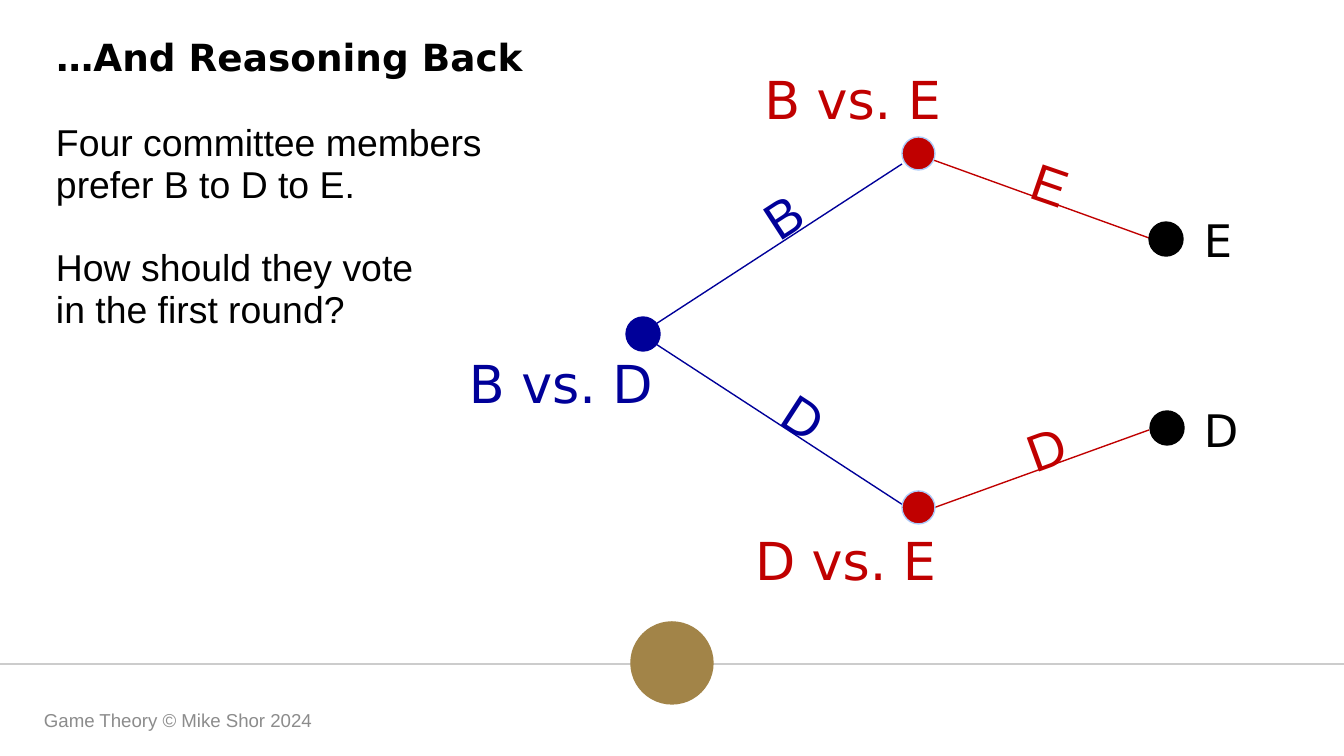
from lxml.etree import SubElement
from pptx import Presentation
from pptx.dml.color import RGBColor
from pptx.enum.shapes import MSO_CONNECTOR, MSO_SHAPE
from pptx.enum.text import MSO_ANCHOR, MSO_AUTO_SIZE, PP_ALIGN
from pptx.oxml.ns import qn
from pptx.util import Pt

PX = 9144000 / 1344
BLUE, RED, BLACK, PALE, GOLD = "000099", "C00000", "000000", "ACCBF9", "A28448"


def emu(*lengths):
    return [round(length * PX) for length in lengths]


def write(frame, lines, size, font, color, margins=(13, 7), align=PP_ALIGN.LEFT):
    frame.word_wrap = True
    frame.auto_size = MSO_AUTO_SIZE.NONE
    frame.vertical_anchor = MSO_ANCHOR.TOP
    frame.margin_left, frame.margin_top = emu(*margins)
    frame.margin_right, frame.margin_bottom = emu(13, 0)
    for index, line in enumerate(lines):
        para = frame.paragraphs[0] if index == 0 else frame.add_paragraph()
        para.alignment = align
        span = para.add_run()
        span.text = line
        span.font.size = Pt(size)
        span.font.name = font
        span.font.color.rgb = RGBColor.from_string(color)


deck = Presentation()
deck.slide_width, deck.slide_height = emu(1344, 756)
page = deck.slides.add_slide(deck.slide_layouts[5])
shapes = page.shapes

title = shapes.title
title.left, title.top, title.width, title.height = emu(43, 27, 672, 60)
write(title.text_frame, ["…And Reasoning Back"], 20, "DejaVu Sans", BLACK)
title.text_frame.paragraphs[0].runs[0].font.bold = True

edges = [
    (0, 664, 1344, 664, "CCCCCC"),
    (642, 333, 902, 164, BLUE),
    (642, 335, 903, 505, BLUE),
    (925, 157, 1149, 238, RED),
    (925, 511, 1149, 430, RED),
]
for x1, y1, x2, y2, color in edges:
    edge = shapes.add_connector(MSO_CONNECTOR.STRAIGHT, *emu(x1, y1, x2, y2))
    edge.line.color.rgb = RGBColor.from_string(color)
    edge.line.width = Pt(0.75)
    SubElement(edge._element.spPr, qn("a:effectLst"))

nodes = [
    (631, 622, 82, GOLD, GOLD),
    (626, 317, 34, BLUE, BLUE),
    (902, 137, 33, RED, PALE),
    (902, 491, 33, RED, PALE),
    (1149, 222, 34, BLACK, BLACK),
    (1150, 411, 34, BLACK, BLACK),
]
for left, top, size, fill, outline in nodes:
    node = shapes.add_shape(MSO_SHAPE.OVAL, *emu(left, top, size, size))
    node.shadow.inherit = False
    node.fill.solid()
    node.fill.fore_color.rgb = RGBColor.from_string(fill)
    node.line.color.rgb = RGBColor.from_string(outline)
    node.line.width = Pt(0.75)

labels = [
    ("B vs. D", 456, 340, 231, 28, BLUE, PP_ALIGN.LEFT),
    ("D vs. E", 742, 517, 233, 28, RED, PP_ALIGN.LEFT),
    ("B vs. E", 734, 56, 220, 28, RED, PP_ALIGN.RIGHT),
    ("E", 1191, 204, 86, 24, BLACK, PP_ALIGN.LEFT),
    ("D", 1191, 394, 71, 24, BLACK, PP_ALIGN.LEFT),
]
for text, left, top, width, size, color, align in labels:
    box = shapes.add_textbox(*emu(left, top, width, 77 if size == 28 else 67))
    write(box.text_frame, [text], size, "DejaVu Sans", color, (13, 11 if size == 28 else 9), align)

votes = [
    ("B", 692, 172, 185, 71, 327, BLUE),
    ("D", 769, 396, 142, 13, 33, BLUE),
    ("E", 978, 141, 148, 57, 19, RED),
    ("D", 968, 402, 172, 57, 340, RED),
]
for text, left, top, width, margin, angle, color in votes:
    box = shapes.add_textbox(*emu(left, top, width, 77))
    box.rotation = angle
    write(box.text_frame, [text], 28, "Arial", color, (margin, 11))

body = shapes.add_textbox(*emu(43, 116, 672, 210))
question = [
    "Four committee members",
    "prefer B to D to E.",
    "How should they vote",
    "in the first round?",
]
write(body.text_frame, question, 20, "Arial", BLACK)
for para in body.text_frame.paragraphs:
    para.line_spacing = 0.94
body.text_frame.paragraphs[2].space_before = Pt(21.6)

footer = shapes.add_textbox(*emu(31, 700, 454, 40))
write(footer.text_frame, ["Game Theory © Mike Shor 2024"], 10, "Arial", "8C8C8C", (13, 0))
footer.text_frame.vertical_anchor = MSO_ANCHOR.MIDDLE

deck.save("out.pptx")
